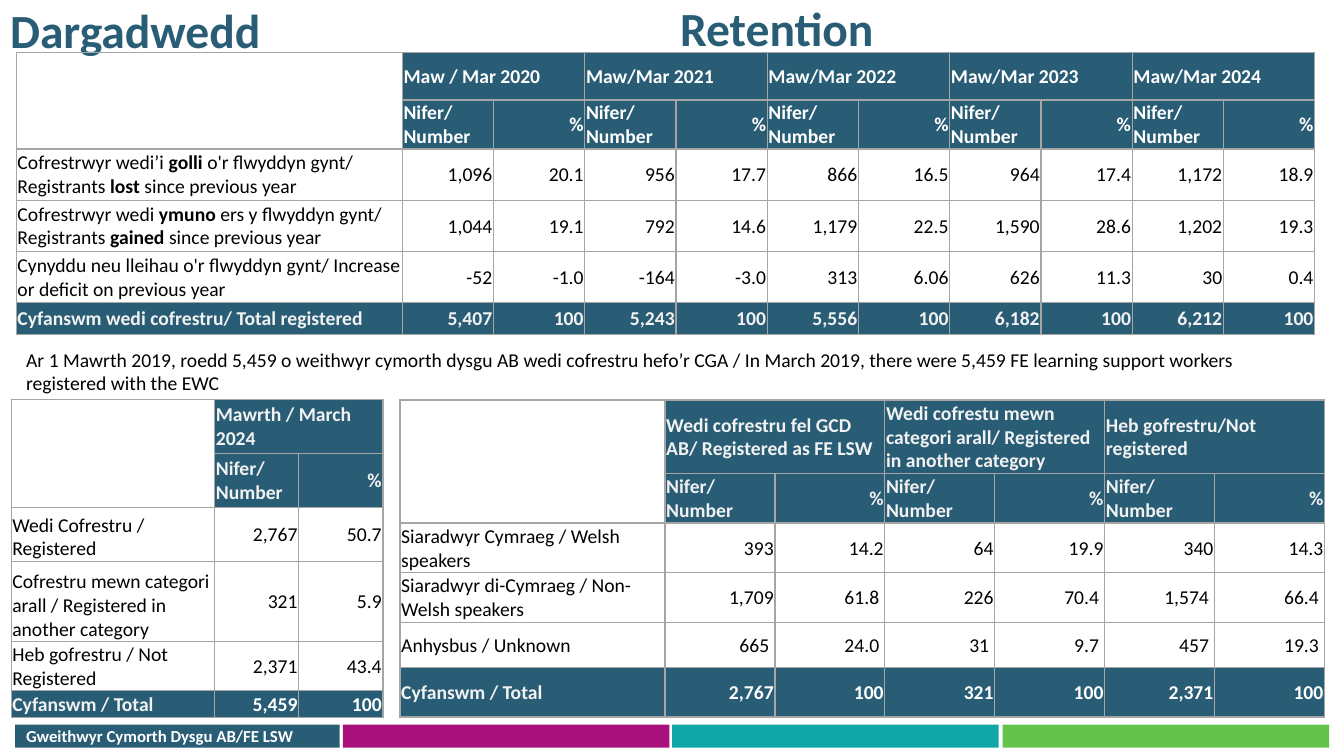
from dataclasses import dataclass

from lxml.etree import SubElement
from pptx import Presentation
from pptx.dml.color import RGBColor
from pptx.enum.shapes import MSO_SHAPE as Shape
from pptx.enum.text import MSO_ANCHOR as Anchor, MSO_AUTO_SIZE as AutoSize, PP_ALIGN as Align
from pptx.oxml.ns import qn
from pptx.slide import Slide
from pptx.table import _Cell as Cell
from pptx.text.text import TextFrame
from pptx.util import Cm, Pt

NAVY = RGBColor(0x29, 0x5D, 0x75)
MAGENTA = RGBColor(0xA8, 0x11, 0x7C)
TEAL = RGBColor(0x11, 0xA6, 0xA8)
GREEN = RGBColor(0x65, 0xC2, 0x4C)
WHITE = RGBColor(0xFF, 0xFF, 0xFF)
PALE = RGBColor(0xF2, 0xF2, 0xF2)
BLACK = RGBColor(0x00, 0x00, 0x00)
BORDER = RGBColor(0xA5, 0xA5, 0xA5)
FONT = "Calibri"


@dataclass(frozen=True)
class Bar:
    left: float
    width: float
    color: RGBColor


@dataclass(frozen=True)
class Caption:
    text: str
    left: float
    top: float
    width: float
    height: float
    size: int
    color: RGBColor
    bold: bool = True
    spacing: float = 0.9


@dataclass(frozen=True)
class Row:
    label: str
    values: tuple[str, ...]


@dataclass(frozen=True)
class DataTable:
    left: float
    top: float
    label_width: float
    value_width: float
    heights: tuple[float, ...]
    groups: tuple[str, ...]
    rows: tuple[Row, ...]
    header_color: RGBColor = PALE
    total_color: RGBColor = WHITE
    label_anchor: Anchor = Anchor.MIDDLE


BARS = (
    Bar(0.38, 8.18, NAVY),
    Bar(8.64, 8.23, MAGENTA),
    Bar(16.94, 8.23, TEAL),
    Bar(25.27, 8.23, GREEN),
)

TITLE = Caption("Dargadwedd", 0, 0.05, 13.26, 1.3, 34, NAVY)
CAPTIONS = (
    Caption("Retention", 16.89, 0, 14.02, 1.3, 34, NAVY),
    Caption("Ar 1 Mawrth 2019, roedd 5,459 o weithwyr cymorth dysgu AB wedi cofrestru hefo’r CGA / "
            "In March 2019, there were 5,459 FE learning support workers registered with the EWC",
            0.41, 8.64, 32.74, 1.45, 14, BLACK, bold=False, spacing=1.0),
    Caption("Gweithwyr Cymorth Dysgu AB/FE LSW", 0.41, 18.21, 7.67, 0.84, 12, WHITE),
)

RETENTION = DataTable(
    0.41, 1.32, 9.73, 2.3, (1.2, 1.23, 1.29, 1.29, 1.29, 0.8),
    ("Maw / Mar 2020", "Maw/Mar 2021", "Maw/Mar 2022", "Maw/Mar 2023", "Maw/Mar 2024"),
    (
        Row("Cofrestrwyr wedi’i *golli *o'r flwyddyn gynt/ Registrants *lost* since previous year",
            ("1,096", "20.1", "956", "17.7", "866", "16.5", "964", "17.4", "1,172", "18.9")),
        Row("Cofrestrwyr wedi *ymuno *ers y flwyddyn gynt/ Registrants *gained* since previous year",
            ("1,044", "19.1", "792", "14.6", "1,179", "22.5", "1,590", "28.6", "1,202", "19.3")),
        Row("Cynyddu neu lleihau o'r flwyddyn gynt/ Increase or deficit on previous year",
            ("-52", "-1.0", "-164", "-3.0", "313", "6.06", "626", "11.3", "30", "0.4")),
        Row("Cyfanswm wedi cofrestru/ Total registered",
            ("5,407", "100", "5,243", "100", "5,556", "100", "6,182", "100", "6,212", "100")),
    ),
    header_color=WHITE, total_color=PALE,
)
WELSH_SPEAKERS = DataTable(
    10.08, 10.08, 6.68, 2.77, (1.85, 1.25, 1.25, 1.25, 1.14, 1.25),
    ("Wedi cofrestru fel GCD AB/ Registered as FE LSW",
     "Wedi cofrestu mewn categori arall/ Registered in another category",
     "Heb gofrestru/Not registered"),
    (
        Row("Siaradwyr Cymraeg / Welsh speakers", ("393", "14.2", "64", "19.9", "340", "14.3")),
        Row("Siaradwyr di-Cymraeg / Non-Welsh speakers",
            ("1,709", "61.8 ", "226", "70.4 ", "1,574 ", "66.4 ")),
        Row("Anhysbus / Unknown", ("665 ", "24.0 ", "31 ", "9.7 ", "457 ", "19.3 ")),
        Row("Cyfanswm / Total", ("2,767", "100", "321", "100", "2,371", "100")),
    ),
)
REGISTRATION = DataTable(
    0.28, 10.06, 5.13, 2.12, (1.36, 1.36, 1.36, 2.02, 1.22, 0.69),
    ("Mawrth / March 2024",),
    (
        Row("Wedi Cofrestru / Registered", ("2,767", "50.7")),
        Row("Cofrestru mewn categori arall / Registered in another category", ("321", "5.9")),
        Row("Heb gofrestru / Not Registered", ("2,371", "43.4")),
        Row("Cyfanswm / Total", ("5,459", "100")),
    ),
    label_anchor=Anchor.BOTTOM,
)


def draw_bar(page: Slide, bar: Bar) -> None:
    shape = page.shapes.add_shape(Shape.RECTANGLE, Cm(bar.left), Cm(18.26), Cm(bar.width), Cm(0.58))
    shape.shadow.inherit = False
    shape.fill.solid()
    shape.fill.fore_color.rgb = bar.color
    shape.line.fill.background()


def write_caption(frame: TextFrame, caption: Caption) -> None:
    frame.text = caption.text
    frame.word_wrap = True
    frame.auto_size = AutoSize.NONE
    frame.vertical_anchor = Anchor.TOP
    para = frame.paragraphs[0]
    para.alignment = Align.LEFT
    para.line_spacing = caption.spacing
    para.space_before = Pt(0)
    font = para.runs[0].font
    font.name, font.size, font.bold = FONT, Pt(caption.size), caption.bold
    font.color.rgb = caption.color


def draw_borders(cell: Cell) -> None:
    properties = cell._tc.get_or_add_tcPr()
    for side in ("lnL", "lnR", "lnT", "lnB"):
        line = SubElement(properties, qn(f"a:{side}"), w=str(Pt(1)))
        fill = SubElement(line, qn("a:solidFill"))
        SubElement(fill, qn("a:srgbClr"), val=str(BORDER))


def write_cell(cell: Cell, text: str, color: RGBColor = BLACK, bold: bool = False,
               align: Align = Align.LEFT, anchor: Anchor = Anchor.MIDDLE) -> None:
    cell.vertical_anchor = anchor
    para = cell.text_frame.paragraphs[0]
    para.alignment = align
    for index, part in enumerate(text.split("*")):
        span = para.add_run()
        span.text = part
        span.font.name, span.font.size = FONT, Pt(14)
        span.font.bold = bold or index % 2 == 1
        span.font.color.rgb = color


def draw_table(page: Slide, data: DataTable) -> None:
    column_count = 1 + 2 * len(data.groups)
    widths = [data.label_width] + [data.value_width] * (column_count - 1)
    table = page.shapes.add_table(len(data.heights), column_count, Cm(data.left), Cm(data.top),
                                  Cm(sum(widths)), Cm(sum(data.heights))).table
    for column, width in zip(table.columns, widths):
        column.width = Cm(width)
    last = len(data.heights) - 1
    for number, (line, height) in enumerate(zip(table.rows, data.heights)):
        line.height = Cm(height)
        for position, cell in enumerate(line.cells):
            cell.margin_left = cell.margin_right = cell.margin_top = Cm(0.03)
            cell.margin_bottom = 0
            draw_borders(cell)
            if number == last or (number < 2 and position > 0):
                cell.fill.solid()
                cell.fill.fore_color.rgb = NAVY
            else:
                cell.fill.background()

    table.cell(0, 0).merge(table.cell(1, 0))
    for index, group in enumerate(data.groups):
        first = 1 + 2 * index
        table.cell(0, first).merge(table.cell(0, first + 1))
        write_cell(table.cell(0, first), group, data.header_color, True)
        write_cell(table.cell(1, first), "Nifer/ Number", data.header_color, True)
        write_cell(table.cell(1, first + 1), "%", data.header_color, True, Align.RIGHT)

    for number, row in enumerate(data.rows, start=2):
        total = number == last
        write_cell(table.cell(number, 0), row.label, PALE if total else BLACK, total,
                   anchor=Anchor.MIDDLE if total else data.label_anchor)
        for position, value in enumerate(row.values, start=1):
            write_cell(table.cell(number, position), value,
                       data.total_color if total else BLACK, total, Align.RIGHT)


def main() -> None:
    deck = Presentation()
    deck.slide_width, deck.slide_height = Cm(33.87), Cm(19.05)
    page = deck.slides.add_slide(deck.slide_layouts[5])
    for bar in BARS:
        draw_bar(page, bar)
    title = page.shapes.title
    title.left, title.top = Cm(TITLE.left), Cm(TITLE.top)
    title.width, title.height = Cm(TITLE.width), Cm(TITLE.height)
    write_caption(title.text_frame, TITLE)
    for caption in CAPTIONS:
        box = page.shapes.add_textbox(Cm(caption.left), Cm(caption.top), Cm(caption.width), Cm(caption.height))
        write_caption(box.text_frame, caption)
    for data in (RETENTION, WELSH_SPEAKERS, REGISTRATION):
        draw_table(page, data)
    deck.save("out.pptx")


if __name__ == "__main__":
    main()
